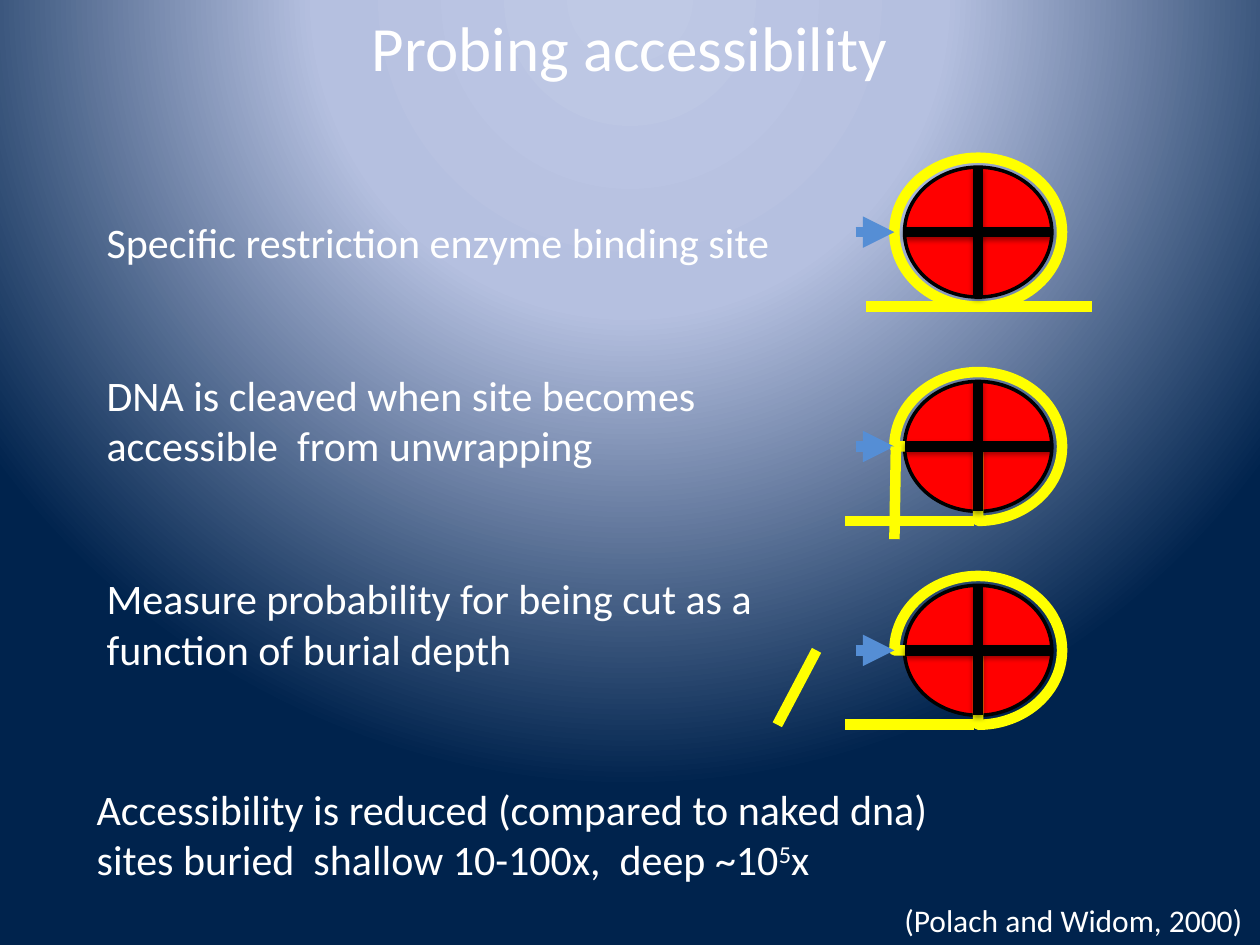
import pptx
import pptx.util
import pptx.oxml
import pptx.oxml.ns
import pptx.dml.color
import pptx.enum.shapes
import pptx.enum.text
import lxml.etree

Cm = pptx.util.Cm
Pt = pptx.util.Pt
qn = pptx.oxml.ns.qn
SHAPE = pptx.enum.shapes.MSO_SHAPE
ALIGN = pptx.enum.text.PP_ALIGN
ANCHOR = pptx.enum.text.MSO_ANCHOR

COLORS = {
    "text": "FFFFFF", "dna": "FFFF00", "histone": "FF0000",
    "outline": "000000", "enzyme": "558ED5",
    "glow": "BFC9E5", "mist": "B5C0E0", "night": "00234D",
}
RGB = {name: pptx.dml.color.RGBColor.from_string(value) for name, value in COLORS.items()}

presentation = pptx.Presentation()
presentation.slide_width = Cm(25.4)
presentation.slide_height = Cm(19.05)
slide = presentation.slides.add_slide(presentation.slide_layouts[6])


def add_text(text, left, top, width, height, size=24, align=ALIGN.LEFT,
             anchor=ANCHOR.TOP, gap=0, wrap=True):
    """Each line of text is a paragraph; the part between ^ marks is superscript."""
    shape = slide.shapes.add_textbox(Cm(left), Cm(top), Cm(width), Cm(height))
    frame = shape.text_frame
    frame.word_wrap = wrap
    frame.vertical_anchor = anchor
    for number, line in enumerate(text.split("\n")):
        paragraph = frame.add_paragraph() if number else frame.paragraphs[0]
        paragraph.alignment = align
        paragraph.space_before = Pt(gap if number else 0)
        for part, words in enumerate(line.split("^")):
            run = paragraph.add_run()
            run.text = words
            run.font.name = "Calibri"
            run.font.size = Pt(size)
            run.font.color.rgb = RGB["text"]
            if part % 2:
                run.font._element.set("baseline", "30000")


def add_line(x1, y1, x2, y2, color, arrow=False, shadow=False):
    line = slide.shapes.add_connector(
        pptx.enum.shapes.MSO_CONNECTOR.STRAIGHT, Cm(x1), Cm(y1), Cm(x2), Cm(y2))
    line.line.color.rgb = RGB[color]
    line.line.width = Pt(6)
    if arrow:
        lxml.etree.SubElement(line.line._get_or_add_ln(), qn("a:tailEnd"), type="triangle")
    effects = lxml.etree.SubElement(line._element.spPr, qn("a:effectLst"))
    if shadow:
        outer = lxml.etree.SubElement(
            effects, qn("a:outerShdw"), blurRad=str(Pt(3.1)), dist=str(Pt(1.6)),
            dir="5400000", rotWithShape="0")
        tint = lxml.etree.SubElement(outer, qn("a:srgbClr"), val=COLORS["outline"])
        lxml.etree.SubElement(tint, qn("a:alpha"), val="38000")


# Background: circular gradient centred above the slide
slide.background.fill.gradient()
gradient = next(slide.element.iter(qn("a:gradFill")))
for child in list(gradient):
    gradient.remove(child)
stops = lxml.etree.SubElement(gradient, qn("a:gsLst"))
for position, color in ((0, "glow"), (40, "mist"), (100, "night")):
    stop = lxml.etree.SubElement(stops, qn("a:gs"), pos=str(position * 1000))
    lxml.etree.SubElement(stop, qn("a:srgbClr"), val=COLORS[color])
circle = lxml.etree.SubElement(gradient, qn("a:path"), path="circle")
lxml.etree.SubElement(circle, qn("a:fillToRect"), l="50000", t="-80000", r="50000", b="180000")

# Title and steps
add_text("Probing accessibility", 0, -0.66, 25.4, 3.18, size=36,
         align=ALIGN.CENTER, anchor=ANCHOR.MIDDLE)
add_text("Specific restriction enzyme binding site\n"
         "DNA is cleaved when site becomes accessible  from unwrapping\n"
         "Measure probability for being cut as a function of burial depth",
         1.9, 4.24, 15.04, 10.52, gap=58.6)

# Nucleosomes: wrapped, unwrapped, cut
CENTER_X = 19.72
DISC = (2.97, 2.62)
RING = (3.38, 3.0)
NUCLEOSOMES = [
    # centre y, ring outline, rotation, ends of the lower DNA strand
    (4.68, SHAPE.OVAL, 0, 17.45, 22.02),
    (9.0, SHAPE.PIE, 180, 17.04, 19.63),
    (13.11, SHAPE.PIE, 180, 17.04, 19.63),
]
for center_y, ring_kind, rotation, strand_left, strand_right in NUCLEOSOMES:
    strand_y = center_y + RING[1] / 2
    for kind, (width, height), color, weight in (
            (SHAPE.OVAL, DISC, "outline", 2), (ring_kind, RING, "dna", 6)):
        shape = slide.shapes.add_shape(
            kind, Cm(CENTER_X - width / 2), Cm(center_y - height / 2), Cm(width), Cm(height))
        shape.shadow.inherit = False
        shape.line.color.rgb = RGB[color]
        shape.line.width = Pt(weight)
        if color == "outline":
            shape.fill.solid()
            shape.fill.fore_color.rgb = RGB["histone"]
        else:
            shape.fill.background()
            shape.rotation = rotation
    add_line(strand_left, strand_y, strand_right, strand_y, "dna")
    # Cross on the disc
    add_line(CENTER_X - DISC[0] / 2, center_y, CENTER_X + DISC[0] / 2, center_y,
             "outline", shadow=True)
    add_line(CENTER_X, center_y + DISC[1] / 2, CENTER_X, center_y - DISC[1] / 2,
             "outline", shadow=True)
    # Enzyme pointing at its site
    add_line(17.25, center_y, CENTER_X - RING[0] / 2, center_y, "enzyme", arrow=True)

# Unwrapped DNA end and the piece cut off
add_line(18.03, 10.87, 18.06, 9.0, "dna")
add_line(15.67, 14.61, 16.46, 13.11, "dna")

# Result and citation
add_text("Accessibility is reduced (compared to naked dna)\n"
         "sites buried  shallow 10-100x,  deep ~10^5^x", 1.7, 15.67, 22.43, 2.31)
add_text("(Polach and Widom, 2000)", 17.98, 18.03, 7.42, 1.02, size=18, wrap=False)

presentation.save("out.pptx")
